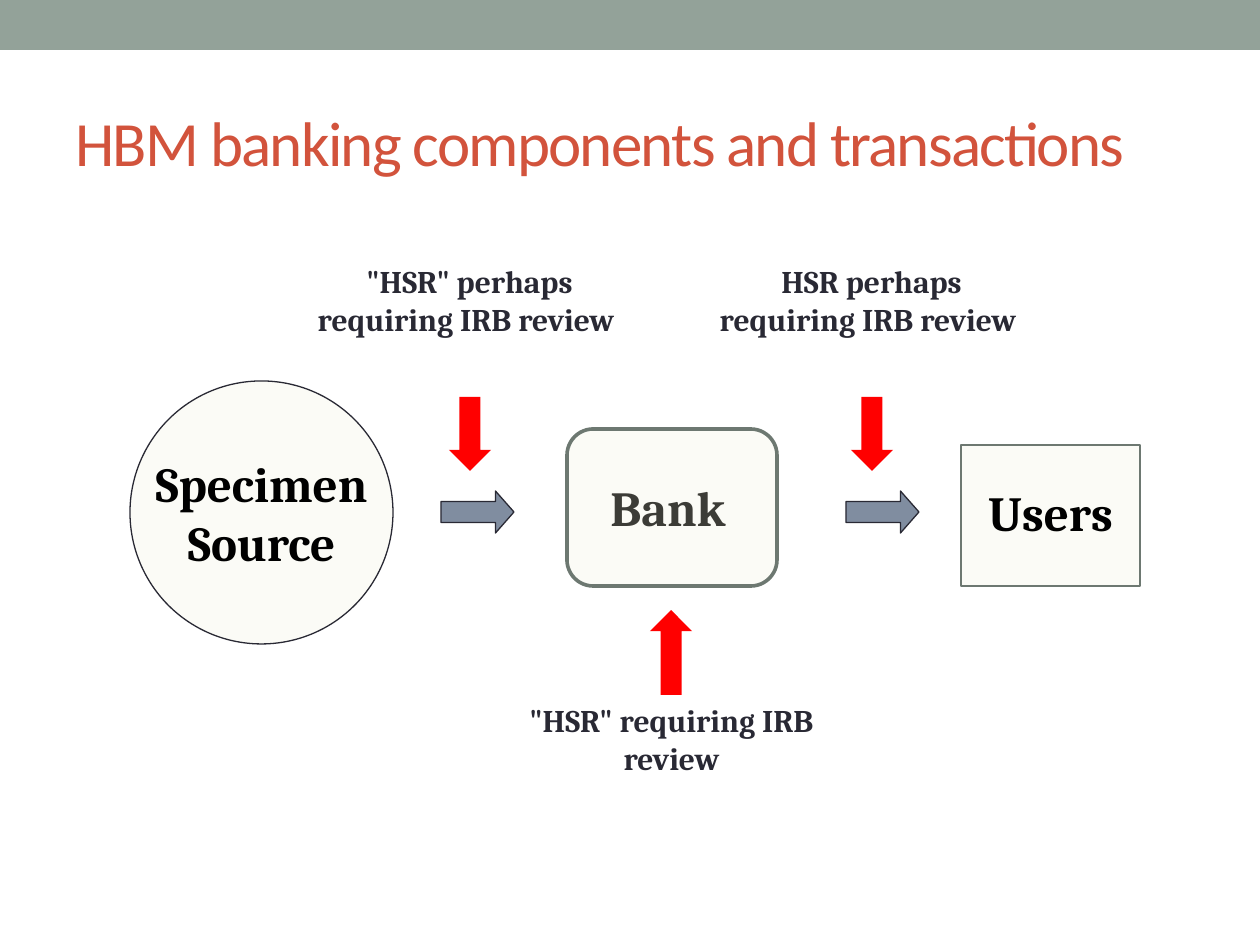
from lxml import etree
from pptx import Presentation
from pptx.dml.color import RGBColor
from pptx.enum.shapes import MSO_SHAPE
from pptx.enum.text import MSO_ANCHOR, MSO_AUTO_SIZE, PP_ALIGN
from pptx.oxml.ns import qn
from pptx.util import Emu, Pt

PX = 914400 / 126
RECT, ROUNDED, ELLIPSE = MSO_SHAPE.RECTANGLE, MSO_SHAPE.ROUNDED_RECTANGLE, MSO_SHAPE.OVAL
RIGHT, DOWN = MSO_SHAPE.RIGHT_ARROW, MSO_SHAPE.DOWN_ARROW
LEFT, CENTER = PP_ALIGN.LEFT, PP_ALIGN.CENTER
TOP, MIDDLE = MSO_ANCHOR.TOP, MSO_ANCHOR.MIDDLE
COLORS = {
    "band": "93A299",
    "title": "D2533C",
    "cream": "F3F2DC",
    "border": "6D7871",
    "dark": "292934",
    "flow": "808DA0",
    "review": "FF0000",
    "black": "000000",
}


def px(n):
    return Emu(round(n * PX))


def color(name):
    return RGBColor.from_string(COLORS[name])


class SlideBuilder:
    def __init__(self, slide):
        self.slide = slide

    def shape(self, kind, box, fill, line=None, width=0.75, alpha=None):
        """Add a preset shape; alpha is the fill opacity in percent."""
        sp = self.slide.shapes.add_shape(kind, *map(px, box))
        sp.shadow.inherit = False
        sp.fill.solid()
        sp.fill.fore_color.rgb = color(fill)
        if alpha is not None:
            clr = sp.fill._xPr.find(qn("a:solidFill"))[0]
            etree.SubElement(clr, qn("a:alpha")).set("val", str(alpha * 1000))
        if line:
            sp.line.color.rgb = color(line)
            sp.line.width = Pt(width)
        else:
            sp.line.fill.background()
        return sp

    def node(self, kind, box, line, width=0.75):
        return self.shape(kind, box, "cream", line, width, alpha=25)

    def flow_arrow(self, left):
        sp = self.shape(RIGHT, (left, 491, 73, 42), "flow", "dark")
        sp.adjustments[1] = 0.44

    def review_arrow(self, left, top, height, rotation=0):
        sp = self.shape(DOWN, (left, top, 42, height), "review")
        sp.rotation = rotation

    def text(self, text, box, size, fill, font="Cambria", bold=True,
             align=CENTER, anchor=MIDDLE):
        tb = self.slide.shapes.add_textbox(*map(px, box))
        tf = tb.text_frame
        tf.text = text
        tf.word_wrap = True
        tf.auto_size = MSO_AUTO_SIZE.NONE
        tf.vertical_anchor = anchor
        p = tf.paragraphs[0]
        p.alignment = align
        r = p.runs[0]
        r.font.name, r.font.size, r.font.bold = font, Pt(size), bold
        r.font.color.rgb = color(fill)
        return r

    def title(self, text):
        r = self.text(text, (63, 73, 1134, 136), 36, "title", "Calibri", False, LEFT)
        r.font._element.set("spc", "-100")

    def node_label(self, text, box):
        self.text(text, box, 28, "black")

    def review_label(self, text, left, top):
        self.text(text, (left, top, 347, 89), 18, "dark", anchor=TOP)


def main():
    prs = Presentation()
    prs.slide_width, prs.slide_height = px(1260), px(945)
    s = SlideBuilder(prs.slides.add_slide(prs.slide_layouts[6]))

    s.shape(RECT, (0, 0, 1260, 50), "band")
    s.title("HBM banking components and transactions")

    s.node(RECT, (961, 445, 179, 141), "border")
    s.node(ELLIPSE, (130, 381, 263, 263), "dark")
    s.node_label("Specimen Source", (120, 446, 283, 132))
    for left in (441, 846):
        s.flow_arrow(left)
    s.node_label("Bank", (595, 471, 146, 72))
    s.node_label("Users", (909, 476, 283, 72))
    # The translucent bank box lies over its label and softens it
    s.node(ROUNDED, (567, 429, 210, 157), "border", 2.08)

    s.review_label('"HSR" perhaps requiring IRB review ', 296, 256)
    s.review_label('"HSR" requiring IRB review', 498, 695)
    s.review_label("HSR perhaps requiring IRB review ", 698, 256)
    s.review_arrow(449, 397, 74)
    s.review_arrow(650, 610, 85, rotation=180)
    s.review_arrow(851, 397, 74)

    prs.save("out.pptx")


if __name__ == "__main__":
    main()
